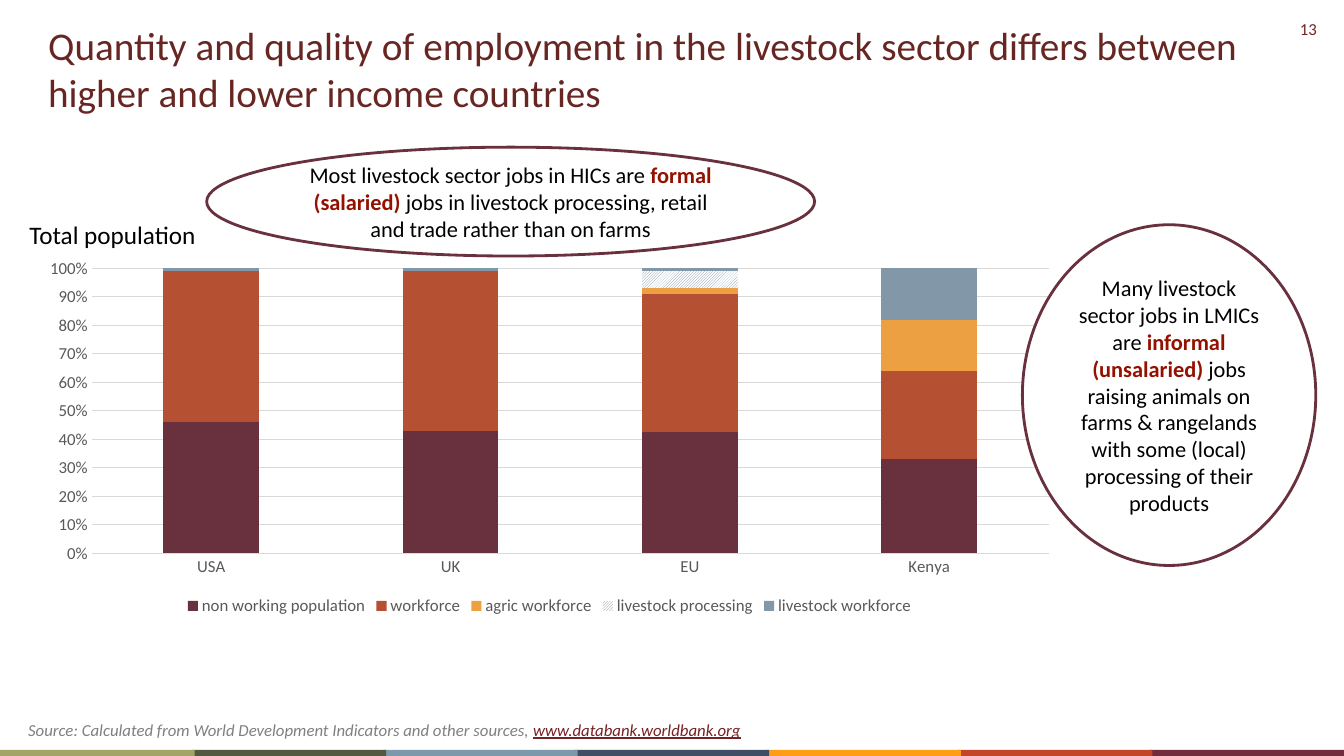
from lxml import etree
from pptx import Presentation
from pptx.chart.data import CategoryChartData
from pptx.dml.color import RGBColor
from pptx.enum.chart import XL_CHART_TYPE, XL_LEGEND_POSITION, XL_TICK_MARK
from pptx.enum.dml import MSO_PATTERN
from pptx.enum.shapes import MSO_SHAPE
from pptx.enum.text import MSO_ANCHOR, PP_ALIGN
from pptx.oxml.ns import qn
from pptx.util import Inches, Pt

LEFT, CENTER, RIGHT = PP_ALIGN.LEFT, PP_ALIGN.CENTER, PP_ALIGN.RIGHT
TOP, MIDDLE = MSO_ANCHOR.TOP, MSO_ANCHOR.MIDDLE
RECTANGLE, OVAL = MSO_SHAPE.RECTANGLE, MSO_SHAPE.OVAL
STACKED = XL_CHART_TYPE.COLUMN_STACKED_100
NO_TICK = XL_TICK_MARK.NONE
DIAGONAL = MSO_PATTERN.DARK_UPWARD_DIAGONAL

THEME = {
    "font": "Calibri",
    "title": "682622", "accent": "762123", "plum": "69303D", "strong": "941100",
    "text": "000000", "source": "808080", "axis": "595959", "grid": "D9D9D9",
    "white": "FFFFFF", "hatch": "7F8FA7",
    "title_size": 28, "label_size": 18, "callout_size": 16, "small_size": 12,
}

TITLE = ("Quantity and quality of employment in the livestock sector differs "
         "between higher and lower income countries")
SOURCE = [
    ("Source: Calculated from World Development Indicators and other sources, ", {}),
    ("www.databank.worldbank.org", {"color": "accent", "underline": True}),
]
STRONG = {"color": "strong", "bold": True}
CALLOUTS = [
    ((2.05, 1.46, 6.03, 1.08), [
        ("Most livestock sector jobs in HICs are ", {}),
        ("formal (salaried) ", STRONG),
        ("jobs in livestock processing, retail and trade rather than on farms", {}),
    ]),
    ((10.14, 2.23, 2.91, 3.38), [
        ("Many livestock sector jobs in LMICs are ", {}),
        ("informal (unsalaried) ", STRONG),
        ("jobs raising animals on farms & rangelands with some (local) "
         "processing of their products", {}),
    ]),
]
COUNTRIES = ["USA", "UK", "EU", "Kenya"]
POPULATION = [
    ("non working population", [46, 43, 43, 33], "69303D"),
    ("workforce", [53, 56, 49, 31], "B65033"),
    ("agric workforce", [0, 0, 2, 18], "ECA041"),
    ("livestock processing", [None, None, 6, None], None),
    ("livestock workforce", [1, 1, 1, 18], "8298A8"),
]
CHART_AREA = (0.29, 2.48, 10.32, 3.67)
PLOT_LAYOUT = {"x": 0.06, "y": 0.05, "w": 0.92, "h": 0.77}
STRIPES = ["A3A467", "53593E", "7C98AB", "404E65", "FF9E16", "C34628", "712C3D"]
STRIPE_PITCH, STRIPE_WIDTH, STRIPE_HEIGHT, STRIPE_TOP = 1.9, 1.93, 0.06, 7.44


def rgb(name):
    return RGBColor.from_string(THEME.get(name, name))


def inches(area):
    return [Inches(length) for length in area]


def style_font(font, size, color, bold=False, italic=False, underline=False):
    font.name, font.size = THEME["font"], Pt(THEME[size])
    font.bold, font.italic, font.underline = bold, italic, underline
    font.color.rgb = rgb(color)


def write(shape, spans, size, color="text", align=LEFT, anchor=TOP,
          wrap=True, spacing=None, italic=False):
    frame = shape.text_frame
    frame.word_wrap, frame.vertical_anchor = wrap, anchor
    para = frame.paragraphs[0]
    para.alignment = align
    if spacing:
        para.line_spacing = Pt(spacing)
    for text, changes in spans:
        span = para.add_run()
        span.text = text
        style_font(span.font, size, **{"color": color, "italic": italic, **changes})


def add_label(page, area, spans, **options):
    write(page.shapes.add_textbox(*inches(area)), spans, **options)


def add_solid(page, kind, area, fill, line=None):
    shape = page.shapes.add_shape(kind, *inches(area))
    shape.shadow.inherit = False
    shape.fill.solid()
    shape.fill.fore_color.rgb = rgb(fill)
    if line:
        shape.line.color.rgb, shape.line.width = rgb(line), Pt(2)
    else:
        shape.line.fill.background()
    return shape


def place_plot(chart):
    plot_area = chart.plots[0]._element.getparent()
    previous = plot_area.find(qn("c:layout"))
    if previous is not None:
        plot_area.remove(previous)
    layout = etree.Element(qn("c:layout"))
    manual = etree.SubElement(layout, qn("c:manualLayout"))
    settings = [("layoutTarget", "inner"), ("xMode", "edge"), ("yMode", "edge")]
    for name, value in settings + list(PLOT_LAYOUT.items()):
        etree.SubElement(manual, qn("c:" + name)).set("val", str(value))
    plot_area.insert(0, layout)


def add_population_chart(page):
    data = CategoryChartData()
    data.categories = COUNTRIES
    for name, values, _ in POPULATION:
        data.add_series(name, values)
    chart = page.shapes.add_chart(STACKED, *inches(CHART_AREA), data).chart
    style_font(chart.font, "small_size", "axis")
    chart.has_title = False
    chart.has_legend = True
    chart.legend.position = XL_LEGEND_POSITION.BOTTOM
    chart.legend.include_in_layout = False
    style_font(chart.legend.font, "small_size", "axis")

    plot = chart.plots[0]
    plot.gap_width, plot.overlap, plot.vary_by_categories = 150, 100, False
    for series, (_, _, color) in zip(plot.series, POPULATION):
        fill = series.format.fill
        if color:
            fill.solid()
            fill.fore_color.rgb = rgb(color)
        else:
            fill.patterned()
            fill.pattern = DIAGONAL
            fill.fore_color.rgb, fill.back_color.rgb = rgb("hatch"), rgb("white")

    countries, shares = chart.category_axis, chart.value_axis
    for axis in (countries, shares):
        axis.major_tick_mark = axis.minor_tick_mark = NO_TICK
        style_font(axis.tick_labels.font, "small_size", "axis")
    shares.minimum_scale, shares.maximum_scale, shares.major_unit = 0, 1, 0.1
    shares.tick_labels.number_format = "0%"
    shares.tick_labels.number_format_is_linked = False
    shares.format.line.fill.background()
    shares.has_major_gridlines = True
    for line in (countries.format.line, shares.major_gridlines.format.line):
        line.color.rgb, line.width = rgb("grid"), Pt(0.75)
    place_plot(chart)


def main():
    deck = Presentation()
    deck.slide_width, deck.slide_height = Inches(13.33), Inches(7.5)
    page = deck.slides.add_slide(deck.slide_layouts[6])

    add_label(page, (12.46, 0.14, 0.7, 0.3), [("13", {})],
              size="small_size", color="accent", align=RIGHT)
    for index, color in reversed(list(enumerate(STRIPES))):
        area = (index * STRIPE_PITCH, STRIPE_TOP, STRIPE_WIDTH, STRIPE_HEIGHT)
        add_solid(page, RECTANGLE, area, color)
    add_label(page, (0.38, 0.16, 12.67, 1.17), [(TITLE, {})],
              size="title_size", color="title")
    add_population_chart(page)
    add_label(page, (0.18, 7.09, 11.35, 0.3), SOURCE,
              size="small_size", color="source", italic=True)
    for area, spans in CALLOUTS:
        write(add_solid(page, OVAL, area, "white", line="plum"), spans,
              size="callout_size", align=CENTER, anchor=MIDDLE)
    add_label(page, (0.18, 1.98, 1.87, 0.5), [("Total population", {})],
              size="label_size", align=CENTER, wrap=False, spacing=32)
    deck.save("out.pptx")


if __name__ == "__main__":
    main()
